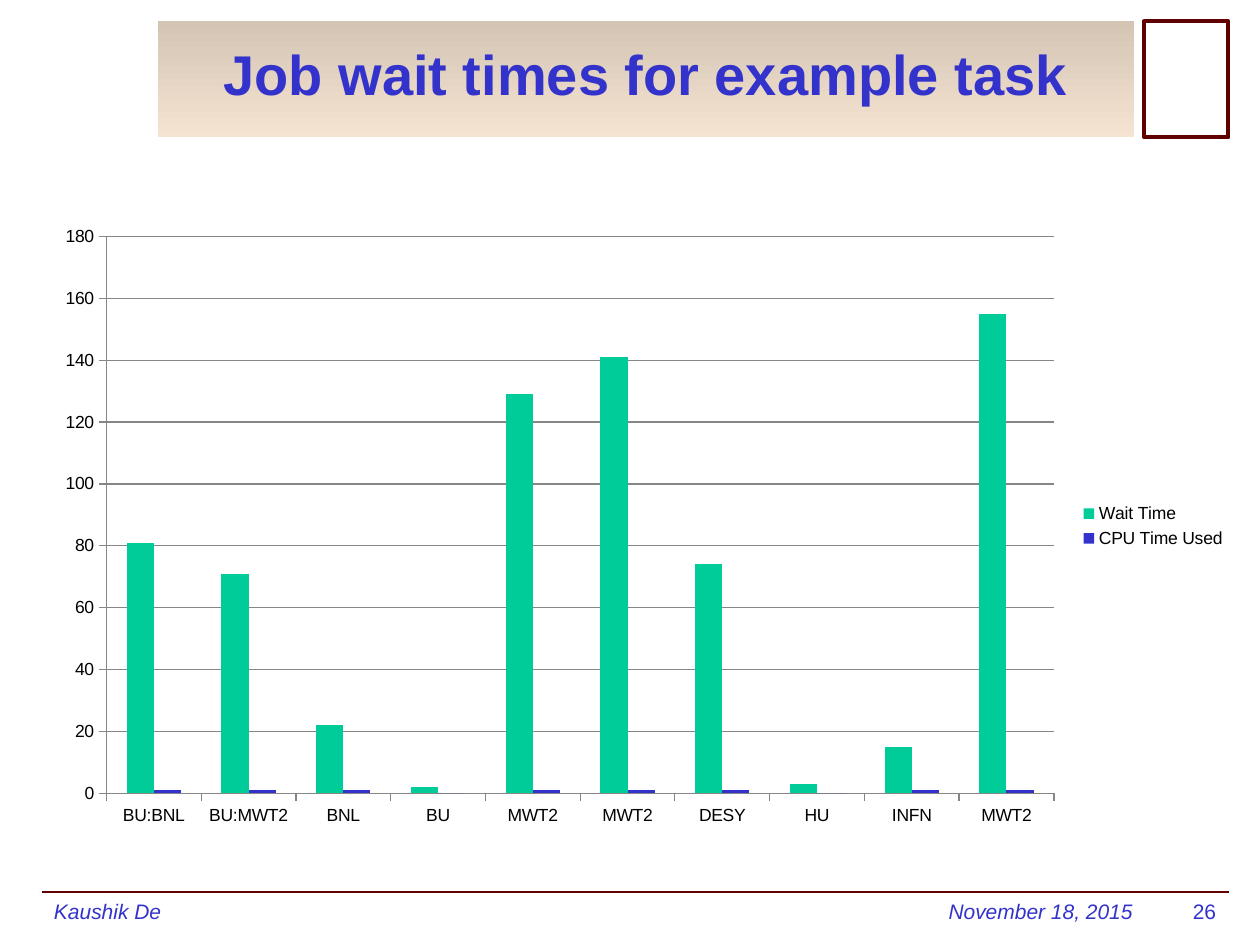
from pptx import Presentation
from pptx.chart.data import CategoryChartData
from pptx.dml.color import RGBColor
from pptx.enum import chart as ch, shapes, text
from pptx.oxml import ns, xmlchemy
from pptx.util import Inches, Pt

BLUE = RGBColor(0x33, 0x33, 0xCC)
GREEN = RGBColor(0x00, 0xCC, 0x99)
MAROON = RGBColor(0x60, 0x00, 0x00)
GREY = RGBColor(0x86, 0x86, 0x86)
BLACK = RGBColor(0, 0, 0)
BAND = RGBColor(0xD3, 0xC4, 0xB4), RGBColor(0xF6, 0xE4, 0xD2)

TITLE = "Job wait times for example task"
SITES = ["BU:BNL", "BU:MWT2", "BNL", "BU", "MWT2", "MWT2", "DESY", "HU", "INFN", "MWT2"]
SERIES = [
    ("Wait Time", GREEN, [81, 71, 22, 2, 129, 141, 74, 3, 15, 155]),
    ("CPU Time Used", BLUE, [1, 1, 1, 0, 1, 1, 1, 0, 1, 1]),
]
FOOTER_TOP, FOOTER_H = 7.08, 0.42
FOOTER = [
    ("November 18, 2015", 6.92, 2.17, text.PP_ALIGN.RIGHT, True),
    ("Kaushik De", 0.33, 6.58, text.PP_ALIGN.LEFT, True),
    ("26", 9.17, 0.58, text.PP_ALIGN.RIGHT, False),
]


def box(*lengths):
    return [Inches(v) for v in lengths]


def style(font, **values):
    color = values.pop("color")
    for name, value in {"name": "Arial", **values}.items():
        setattr(font, name, value)
    font.color.rgb = color


def add_frame(s):
    rule = s.shapes.add_connector(
        shapes.MSO_CONNECTOR.STRAIGHT, *box(0.33, FOOTER_TOP, 9.75, FOOTER_TOP))
    rule._element.spPr.append(xmlchemy.OxmlElement("a:effectLst"))
    sp = s.shapes.add_shape(shapes.MSO_SHAPE.RECTANGLE, *box(9.08, 0.17, 0.67, 0.92))
    sp.shadow.inherit = False
    sp.fill.background()
    for shape, width in ((rule, 1), (sp, 2.25)):
        shape.line.color.rgb = MAROON
        shape.line.width = Pt(width)


def add_title(s):
    sp = s.shapes.title
    sp.left, sp.top, sp.width, sp.height = box(1.25, 0.17, 7.75, 0.92)
    sp.fill.gradient()
    sp.fill.gradient_angle = 270
    for stop, color in zip(sp.fill.gradient_stops, BAND):
        stop.color.rgb = color
    tf = sp.text_frame
    tf.text = TITLE
    tf.vertical_anchor = text.MSO_ANCHOR.MIDDLE
    p = tf.paragraphs[0]
    p.alignment = text.PP_ALIGN.CENTER
    p.line_spacing = 0.8
    style(p.runs[0].font, size=Pt(32), bold=True, color=BLUE)


def add_wait_chart(s):
    data = CategoryChartData()
    data.categories = SITES
    for name, _, values in SERIES:
        data.add_series(name, values)
    chart = s.shapes.add_chart(
        ch.XL_CHART_TYPE.COLUMN_CLUSTERED, *box(0.33, 1.7, 9.5, 4.95), data).chart
    style(chart.font, size=Pt(10), color=BLACK)
    chart.has_title = False
    chart.has_legend = True
    chart.legend.position = ch.XL_LEGEND_POSITION.RIGHT
    chart.legend.include_in_layout = False
    plot = chart.plots[0]
    plot.gap_width = 150
    plot.overlap = 0
    plot.vary_by_categories = False
    for series, (_, color, _) in zip(plot.series, SERIES):
        series.format.fill.solid()
        series.format.fill.fore_color.rgb = color
        series.invert_if_negative = False
    value = chart.value_axis
    value.minimum_scale, value.maximum_scale, value.major_unit = 0, 180, 20
    value.has_major_gridlines = True
    for axis in (value, chart.category_axis):
        axis.major_tick_mark = ch.XL_TICK_MARK.OUTSIDE
        axis.minor_tick_mark = ch.XL_TICK_MARK.NONE
    for part in (value, chart.category_axis, value.major_gridlines):
        part.format.line.color.rgb = GREY
        part.format.line.width = Pt(0.75)


def add_footer(s):
    for words, left, width, align, italic in FOOTER:
        tf = s.shapes.add_textbox(*box(left, FOOTER_TOP, width, FOOTER_H)).text_frame
        tf.word_wrap = True
        tf.text = words
        p = tf.paragraphs[0]
        p.alignment = align
        style(p.runs[0].font, size=Pt(12), italic=italic, color=BLUE)


def main():
    prs = Presentation()
    prs.slide_width, prs.slide_height = box(10, 7.5)
    s = prs.slides.add_slide(prs.slide_layouts[5])
    add_frame(s)
    add_title(s)
    add_wait_chart(s)
    add_footer(s)
    prs.save("out.pptx")


if __name__ == "__main__":
    main()
